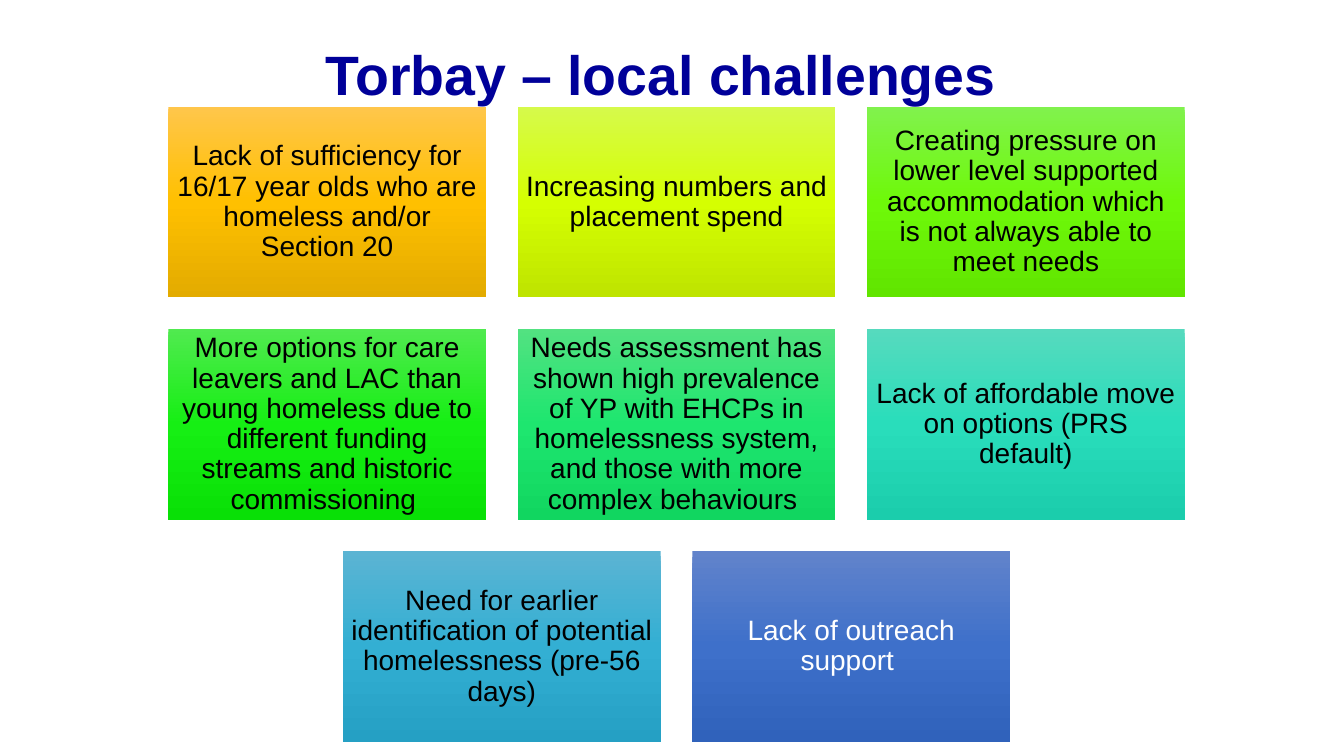
"""Build the slide of local challenges as centred rows of gradient tiles."""
import copy
from dataclasses import dataclass

import pptx
import pptx.dml.color
import pptx.enum.shapes
import pptx.enum.text
import pptx.oxml.ns
import pptx.presentation
import pptx.shapes.base
import pptx.slide
import pptx.util

Inches = pptx.util.Inches


@dataclass(frozen=True)
class Theme:
    font: str = "Arial"
    title_color: str = "000099"
    dark_text: str = "000000"
    light_text: str = "FFFFFF"
    title_size: float = 39.6
    tile_size: float = 20
    line_spacing: float = 0.9


@dataclass(frozen=True)
class Grid:
    center: float = 6.71
    top: float = 1.06
    width: float = 3.15
    height: float = 1.89
    gap: float = 3.15 / 10
    inset: float = 0.08


@dataclass(frozen=True)
class Tile:
    text: str
    gradient: tuple[str, str, str]
    color: str


THEME = Theme()
GRID = Grid()
ROWS = [
    [
        Tile("Lack of sufficiency for 16/17 year olds who are homeless and/or Section 20",
             ("FFC64B", "FFC000", "E3AB00"), THEME.dark_text),
        Tile("Increasing numbers and placement spend",
             ("D6FA4B", "D5FF01", "BEE400"), THEME.dark_text),
        Tile("Creating pressure on lower level supported accommodation which is not "
             "always able to meet needs",
             ("81F24D", "6EF909", "61E500"), THEME.dark_text),
    ],
    [
        Tile("More options for care leavers and LAC than young homeless due to different "
             "funding streams and historic commissioning ",
             ("50EA4F", "16EF14", "09E006"), THEME.dark_text),
        Tile("Needs assessment has shown high prevalence of YP with EHCPs in homelessness "
             "system, and those with more complex behaviours ",
             ("52E281", "1EE66F", "11D660"), THEME.dark_text),
        Tile("Lack of affordable move on options (PRS default)",
             ("56DABE", "29DDBB", "1BCDAC"), THEME.dark_text),
    ],
    [
        Tile("Need for earlier identification of potential homelessness (pre-56 days)",
             ("5BB4D3", "33AFD3", "25A0C4"), THEME.dark_text),
        Tile("Lack of outreach support ",
             ("6183CB", "3E70CA", "3062BB"), THEME.light_text),
    ],
]


def set_attributes(target: object, values: dict[str, object]) -> None:
    for name, value in values.items():
        setattr(target, name, value)


def write_text(shape: pptx.shapes.base.BaseShape, text: str, size: float, color: str,
               bold: bool, insets: tuple[float, float, float, float]) -> None:
    frame = shape.text_frame
    frame.text = text
    left, top, right, bottom = insets
    set_attributes(frame, {
        "word_wrap": True,
        "auto_size": pptx.enum.text.MSO_AUTO_SIZE.NONE,
        "vertical_anchor": pptx.enum.text.MSO_ANCHOR.MIDDLE,
        "margin_left": Inches(left),
        "margin_top": Inches(top),
        "margin_right": Inches(right),
        "margin_bottom": Inches(bottom),
    })
    paragraph = frame.paragraphs[0]
    set_attributes(paragraph, {
        "alignment": pptx.enum.text.PP_ALIGN.CENTER,
        "line_spacing": THEME.line_spacing,
    })
    font = paragraph.runs[0].font
    set_attributes(font, {"name": THEME.font, "size": pptx.util.Pt(size), "bold": bold})
    font.color.rgb = pptx.dml.color.RGBColor.from_string(color)


def fill_gradient(shape: pptx.shapes.base.BaseShape, colors: tuple[str, str, str]) -> None:
    shape.fill.gradient()
    shape.fill.gradient_angle = 270
    stop_list = shape._element.spPr.find(".//" + pptx.oxml.ns.qn("a:gsLst"))
    stop_list.append(copy.deepcopy(stop_list[-1]))
    for index, (stop, color) in enumerate(zip(shape.fill.gradient_stops, colors)):
        stop.position = index / 2
        stop.color.rgb = pptx.dml.color.RGBColor.from_string(color)


def add_title(slide: pptx.slide.Slide) -> None:
    title = slide.shapes.title
    set_attributes(title, {
        "left": Inches(0.96), "top": Inches(0.4),
        "width": Inches(11.5), "height": Inches(1.3),
    })
    write_text(title, "Torbay – local challenges", THEME.title_size, THEME.title_color,
               True, (0.1, 0.05, 0.41, 0.62))


def add_tile(slide: pptx.slide.Slide, tile: Tile, left: float, top: float) -> None:
    shape = slide.shapes.add_shape(
        pptx.enum.shapes.MSO_SHAPE.RECTANGLE,
        Inches(left), Inches(top), Inches(GRID.width), Inches(GRID.height))
    shape.shadow.inherit = False
    shape.line.fill.background()
    fill_gradient(shape, tile.gradient)
    write_text(shape, tile.text, THEME.tile_size, tile.color, False, (GRID.inset,) * 4)


def add_rows(slide: pptx.slide.Slide) -> None:
    pitch = GRID.width + GRID.gap
    for row_index, row in enumerate(ROWS):
        row_left = GRID.center - (len(row) * pitch - GRID.gap) / 2
        top = GRID.top + row_index * (GRID.height + GRID.gap)
        for column_index, tile in enumerate(row):
            add_tile(slide, tile, row_left + column_index * pitch, top)


def main() -> None:
    presentation = pptx.Presentation()
    set_attributes(presentation, {
        "slide_width": Inches(13.33), "slide_height": Inches(7.5),
    })
    slide = presentation.slides.add_slide(presentation.slide_layouts[5])
    add_title(slide)
    add_rows(slide)
    presentation.save("out.pptx")


if __name__ == "__main__":
    main()
